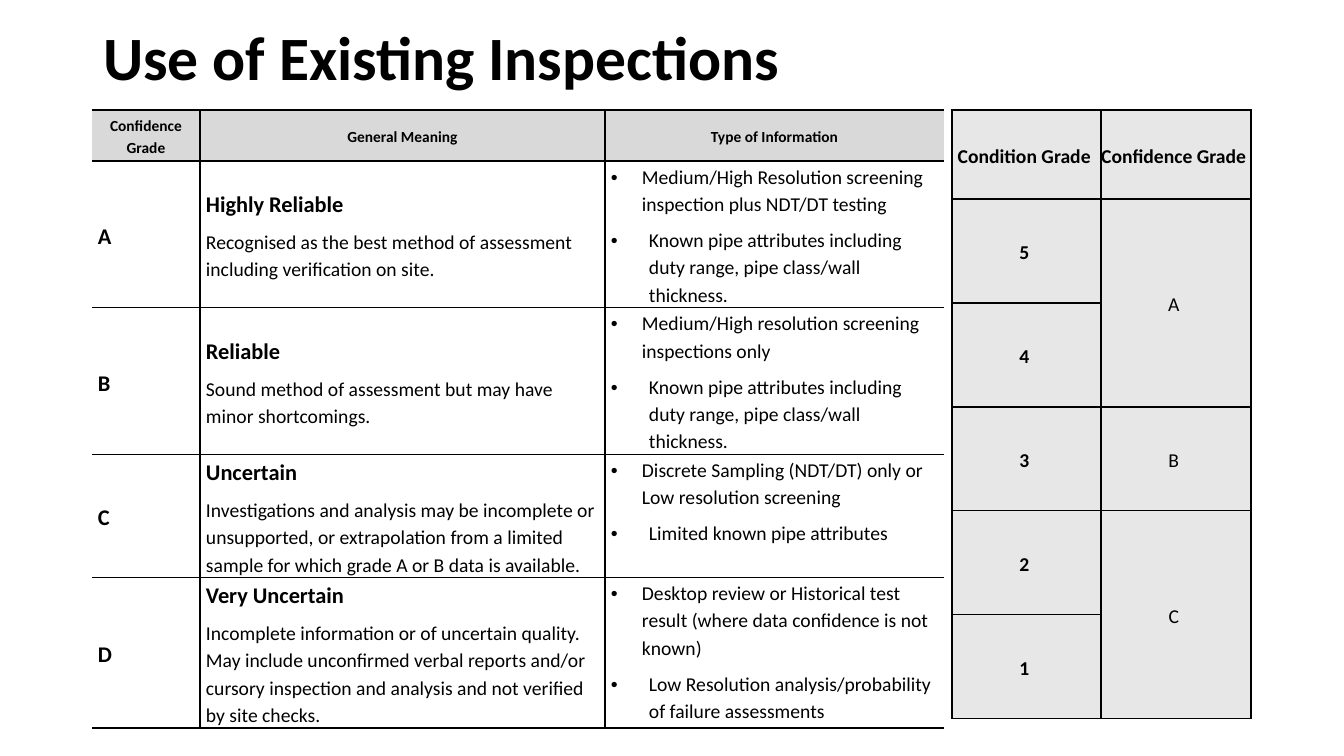
import lxml.etree
import pptx
import pptx.dml.color
import pptx.enum.text
import pptx.oxml.ns
import pptx.util

TITLE = "Use of Existing Inspections"
HEADS = ["Confidence Grade", "General Meaning", "Type of Information"]
GRADES = [
    ("A", "Highly Reliable",
     "Recognised as the best method of assessment including verification on site.",
     "Medium/High Resolution screening inspection plus NDT/DT testing",
     "Known pipe attributes including duty range, pipe class/wall thickness."),
    ("B", "Reliable",
     "Sound method of assessment but may have minor shortcomings.",
     "Medium/High resolution screening inspections only",
     "Known pipe attributes including duty range, pipe class/wall thickness."),
    ("C", "Uncertain",
     "Investigations and analysis may be incomplete or unsupported, or extrapolation "
     "from a limited sample for which grade A or B data is available.",
     "Discrete Sampling (NDT/DT) only or Low resolution screening",
     "Limited known pipe attributes"),
    ("D", "Very Uncertain",
     "Incomplete information or of uncertain quality. May include unconfirmed verbal "
     "reports and/or cursory inspection and analysis and not verified by site checks.",
     "Desktop review or Historical test result (where data confidence is not known)",
     "Low Resolution analysis/probability of failure assessments"),
]
SCORES = ["Condition Grade", "5", "4", "3", "2", "1"]
TRUST = [("Confidence Grade", 0, 0), ("A", 1, 2), ("B", 3, 3), ("C", 4, 5)]

BLACK = pptx.dml.color.RGBColor(0, 0, 0)
WHITE = pptx.dml.color.RGBColor(255, 255, 255)
GREY = pptx.dml.color.RGBColor(0xD9, 0xD9, 0xD9)
PALE = pptx.dml.color.RGBColor(0xE7, 0xE7, 0xE7)
FONT = "Calibri"
HARD = chr(160)
Pt = pptx.util.Pt
LEFT = pptx.enum.text.PP_ALIGN.LEFT
MID = pptx.enum.text.PP_ALIGN.CENTER
TOP = pptx.enum.text.MSO_ANCHOR.TOP
HALF = pptx.enum.text.MSO_ANCHOR.MIDDLE


def px(n):
    return round(n * 914400 / 100.8)


def put(item, vals):
    for key, val in vals.items():
        setattr(item, key, val)


def node(base, tag, **vals):
    return lxml.etree.SubElement(base, pptx.oxml.ns.qn(tag), vals)


def line(para, text, size, bold=False, align=LEFT, before=0, after=6,
         space=1.15, hang=0):
    run = para.add_run()
    run.text = text
    put(para, dict(alignment=align, line_spacing=space,
                   space_before=Pt(before), space_after=Pt(after)))
    put(run.font, dict(name=FONT, size=Pt(size), bold=bold))
    run.font.color.rgb = BLACK
    if hang:
        props = para._p.get_or_add_pPr()
        props.set("marL", str(px(hang)))
        props.set("indent", str(-px(hang)))
        node(props, "a:buFont", typeface="Arial")
        node(props, "a:buChar", char="•")


def fill(cell, rows, anchor=HALF):
    frame = cell.text_frame
    for num, row in enumerate(rows):
        line(frame.add_paragraph() if num else frame.paragraphs[0], **row)
    cell.vertical_anchor = anchor


def frame(cell, edges, pad, color):
    put(cell, dict(margin_left=px(pad), margin_right=px(pad),
                   margin_top=px(pad // 6), margin_bottom=0))
    props = cell._tc.get_or_add_tcPr()
    for side, width in zip("LRTB", edges):
        edge = node(props, "a:ln" + side, w=str(Pt(width)))
        if width:
            paint = node(edge, "a:solidFill")
            node(paint, "a:srgbClr", val=str(BLACK))
        else:
            node(edge, "a:noFill")
    cell.fill.solid()
    cell.fill.fore_color.rgb = color


def grid(slide, left, top, cols, rows):
    table = slide.shapes.add_table(
        len(rows), len(cols), px(left), px(top),
        px(sum(cols)), px(sum(rows))).table
    put(table, dict(first_row=False, horz_banding=False))
    for col, size in zip(table.columns, cols):
        col.width = px(size)
    for row, size in zip(table.rows, rows):
        row.height = px(size)
    return table


def meaning(slide):
    table = grid(slide, 92, 110, [108, 405, 339], [51] + [110] * 4)
    last = len(GRADES)
    for r in range(last + 1):
        for c in range(3):
            edges = (int(c > 0), int(c < 2), 1.5 if r < 2 else 1,
                     1.5 if r in (0, last) else 1)
            frame(table.cell(r, c), edges, 6, WHITE if r else GREY)
    for c, head in enumerate(HEADS):
        fill(table.cell(0, c),
             [dict(text=head, size=11, bold=True, align=MID, after=10)])
    for r, (grade, name, note, first, second) in enumerate(GRADES, 1):
        fill(table.cell(r, 0), [dict(text=grade, size=16, bold=True, after=10)])
        fill(table.cell(r, 1), [dict(text=name, size=16, bold=True),
                                dict(text=note, size=14)])
        fill(table.cell(r, 2), [dict(text=first, size=14, hang=31),
                                dict(text=second, size=14, hang=38)], TOP)


def rating(slide):
    table = grid(slide, 952, 110, [149, 150], [89] + [104] * 5)
    for cell in table.iter_cells():
        frame(cell, (1, 1, 1, 1), 0, PALE)
    for r, score in enumerate(SCORES):
        fill(table.cell(r, 0), [dict(text=score + HARD, size=14, bold=True,
                                     align=MID, before=6)])
    for text, start, end in TRUST:
        cell = table.cell(start, 1)
        if end > start:
            cell.merge(table.cell(end, 1))
        fill(cell, [dict(text=text + HARD, size=14, bold=start == 0,
                         align=MID, after=10)])


def main():
    deck = pptx.Presentation()
    put(deck, dict(slide_width=px(1344), slide_height=px(756)))
    slide = deck.slides.add_slide(deck.slide_layouts[5])
    title = slide.shapes.title
    put(title, dict(left=px(93), top=px(20), width=px(1159), height=px(81)))
    title.text_frame.vertical_anchor = HALF
    line(title.text_frame.paragraphs[0], TITLE, 44, True, after=0, space=0.9)
    meaning(slide)
    rating(slide)
    deck.save("out.pptx")


if __name__ == "__main__":
    main()
